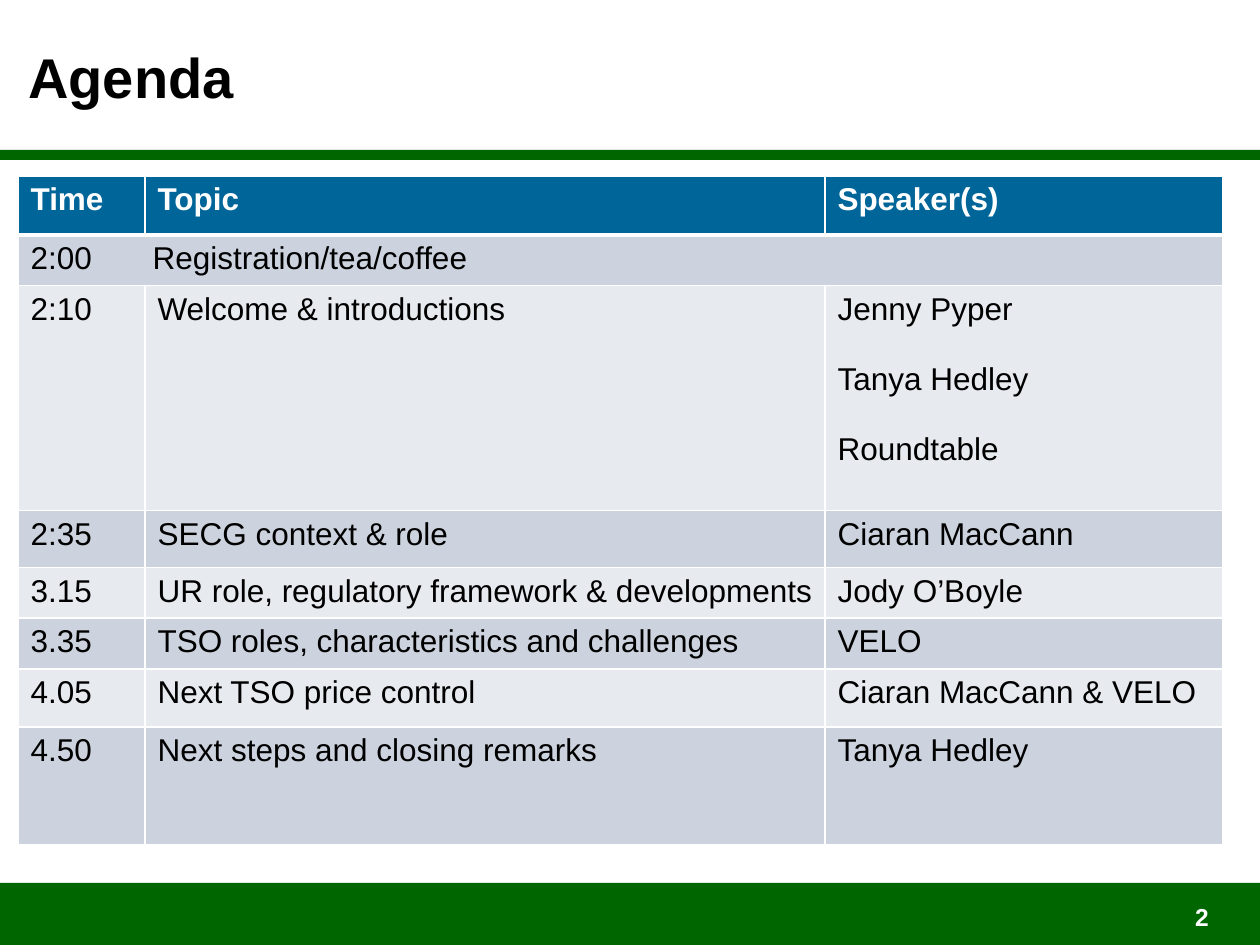
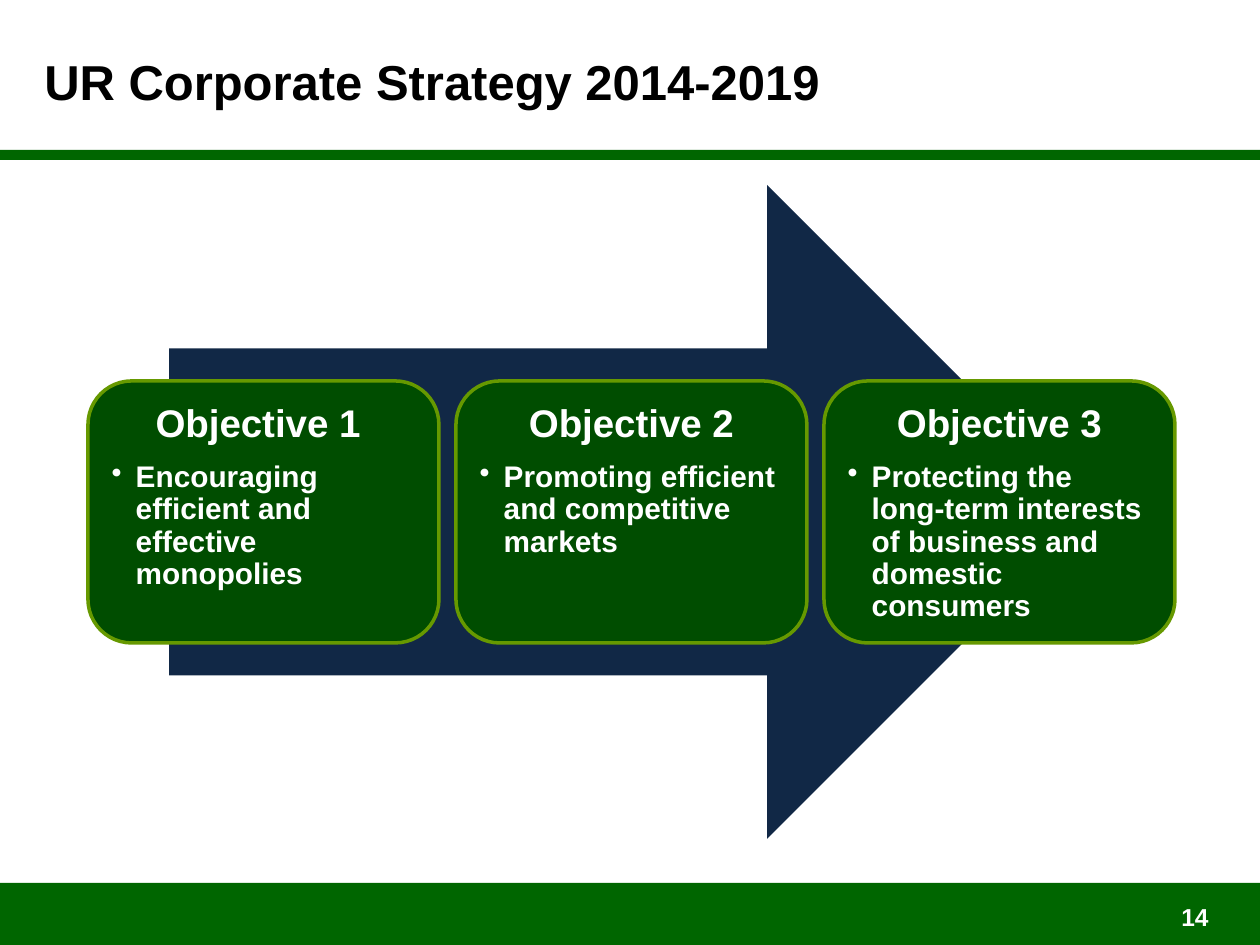
from lxml import etree
from pptx import Presentation
from pptx.dml.color import RGBColor
from pptx.enum.shapes import MSO_SHAPE
from pptx.enum.text import MSO_ANCHOR, PP_ALIGN
from pptx.oxml.ns import qn
from pptx.util import Emu, Pt

RECT, ROUNDED, ARROW = MSO_SHAPE.RECTANGLE, MSO_SHAPE.ROUNDED_RECTANGLE, MSO_SHAPE.RIGHT_ARROW
TOP, MIDDLE = MSO_ANCHOR.TOP, MSO_ANCHOR.MIDDLE
LEFT, CENTER, RIGHT = PP_ALIGN.LEFT, PP_ALIGN.CENTER, PP_ALIGN.RIGHT

PX_PER_INCH = 126
SLIDE_W, SLIDE_H = 1260, 945


def px(length):
    return Emu(round(length * 914400 / PX_PER_INCH))


def color(hex_value):
    return RGBColor.from_string(hex_value)


def add_xml(parent, tag, **attributes):
    return etree.SubElement(parent, qn(tag), {k: str(v) for k, v in attributes.items()})


class Deck:
    FONT = "Arial"
    WHITE, BLACK = "FFFFFF", "000000"
    GREEN, DARK_GREEN, LIME = "006600", "004D00", "669900"
    NAVY, HEADER_BLUE = "112846", "006699"
    STRIPES = ("CCD3DE", "E7EAEF")

    def __init__(self):
        self.prs = Presentation()
        self.prs.slide_width, self.prs.slide_height = px(SLIDE_W), px(SLIDE_H)
        self.slide = None

    def new_slide(self, title, title_left, title_top, title_size, number):
        """Start a slide with the shared bands, title and page number."""
        self.slide = self.prs.slides.add_slide(self.prs.slide_layouts[6])
        self.shape(RECT, 0, 883, SLIDE_W, 62, self.GREEN)
        self.shape(RECT, 0, 150, SLIDE_W, 10, self.GREEN)
        self.text(title, title_left, title_top, 896, 78, title_size, self.BLACK, LEFT, MIDDLE)
        self.text(str(number), 927, 896, 294, 48, 14, self.WHITE, RIGHT, TOP)

    def run(self, paragraph, content, size, hex_value, bold=False):
        run = paragraph.add_run()
        run.text = content
        run.font.name, run.font.size, run.font.bold = self.FONT, Pt(size), bold
        run.font.color.rgb = color(hex_value)

    def text(self, content, left, top, width, height, size, hex_value, align, anchor):
        box = self.slide.shapes.add_textbox(px(left), px(top), px(width), px(height))
        frame = box.text_frame
        frame.word_wrap, frame.vertical_anchor = True, anchor
        frame.paragraphs[0].alignment = align
        self.run(frame.paragraphs[0], content, size, hex_value, bold=True)

    def shape(self, kind, left, top, width, height, fill, line=None):
        shape = self.slide.shapes.add_shape(kind, px(left), px(top), px(width), px(height))
        shape.shadow.inherit = False
        shape.fill.solid()
        shape.fill.fore_color.rgb = color(fill)
        if line:
            shape.line.color.rgb, shape.line.width = color(line), Pt(2)
        else:
            shape.line.fill.background()
        return shape

    def card(self, heading, point, left, top, width, height):
        """Rounded card with a centred heading and one bullet."""
        frame = self.shape(ROUNDED, left, top, width, height, self.DARK_GREEN, self.LIME).text_frame
        frame.word_wrap, frame.vertical_anchor = True, TOP
        frame.margin_left = frame.margin_right = frame.margin_top = frame.margin_bottom = px(11)
        head, bullet = frame.paragraphs[0], frame.add_paragraph()
        head.alignment, bullet.alignment = CENTER, LEFT
        head.line_spacing = bullet.line_spacing = 0.9
        head.space_after = Pt(9)
        props = bullet._p.get_or_add_pPr()
        props.set("marL", str(px(24)))
        props.set("indent", str(-px(24)))
        add_xml(props, "a:buChar", char="•")
        self.run(head, heading, 22, self.WHITE, bold=True)
        self.run(bullet, point, 17, self.WHITE, bold=True)

    def borders(self, cell, top, bottom):
        props = cell._tc.get_or_add_tcPr()
        for side, points in (("L", 1), ("R", 1), ("T", top), ("B", bottom)):
            line = add_xml(props, f"a:ln{side}", w=Pt(points))
            add_xml(add_xml(line, "a:solidFill"), "a:srgbClr", val=self.WHITE)

    def table(self, rows, left, top, widths, heights):
        """Striped table; a row with one entry spans all columns, lists give paragraphs."""
        table = self.slide.shapes.add_table(
            len(rows), len(widths), px(left), px(top), px(sum(widths)), px(sum(heights))).table
        for column, width in zip(table.columns, widths):
            column.width = px(width)
        for row, height in zip(table.rows, heights):
            row.height = px(height)
        for r, entries in enumerate(rows):
            header = r == 0
            for c in range(len(widths)):
                cell = table.cell(r, c)
                self.borders(cell, 3 if r == 1 else 1, 3 if header else 1)
                cell.fill.solid()
                cell.fill.fore_color.rgb = color(
                    self.HEADER_BLUE if header else self.STRIPES[(r - 1) % 2])
            if len(entries) == 1:
                table.cell(r, 0).merge(table.cell(r, len(widths) - 1))
            for c, entry in enumerate(entries):
                frame = table.cell(r, c).text_frame
                lines = entry if isinstance(entry, list) else [entry]
                for i, line in enumerate(lines):
                    paragraph = frame.add_paragraph() if i else frame.paragraphs[0]
                    if i:
                        paragraph.space_before = Pt(20)
                    if "\t" in line:
                        stops = add_xml(paragraph._p.get_or_add_pPr(), "a:tabLst")
                        add_xml(stops, "a:tab", pos=px(122), algn="l")
                    self.run(paragraph, line, 18, self.WHITE if header else self.BLACK, header)


AGENDA = [
    ("Time", "Topic", "Speaker(s)"),
    ("2:00\tRegistration/tea/coffee",),
    ("2:10", "Welcome & introductions", ["Jenny Pyper", "Tanya Hedley", "Roundtable"]),
    ("2:35", "SECG context & role", "Ciaran MacCann"),
    ("3.15", "UR role, regulatory framework & developments", "Jody O’Boyle"),
    ("3.35", "TSO roles, characteristics and challenges", "VELO"),
    ("4.05", "Next TSO price control", "Ciaran MacCann & VELO"),
    ("4.50", "Next steps and closing remarks", "Tanya Hedley"),
]
OBJECTIVES = [
    ("Objective 1 ", "Encouraging efficient and effective monopolies"),
    ("Objective 2", "Promoting efficient and competitive markets"),
    ("Objective 3", "Protecting the long-term interests of business and domestic consumers"),
]


def main():
    deck = Deck()

    # Agenda
    deck.new_slide("Agenda", 16, 37, 32, 2)
    deck.table(AGENDA, 18, 176, (127, 680, 398), (59, 49, 225, 57, 49, 51, 58, 118))

    # Corporate strategy: objectives along an arrow
    deck.new_slide("UR Corporate Strategy 2014-2019", 32, 42, 28, 14)
    deck.shape(ARROW, 169, 185, 925, 654, deck.NAVY)
    card_width, gap = 351, 17
    for i, (heading, point) in enumerate(OBJECTIVES):
        deck.card(heading, point, 88 + i * (card_width + gap), 381, card_width, 262)

    deck.prs.save("out.pptx")


if __name__ == "__main__":
    main()
